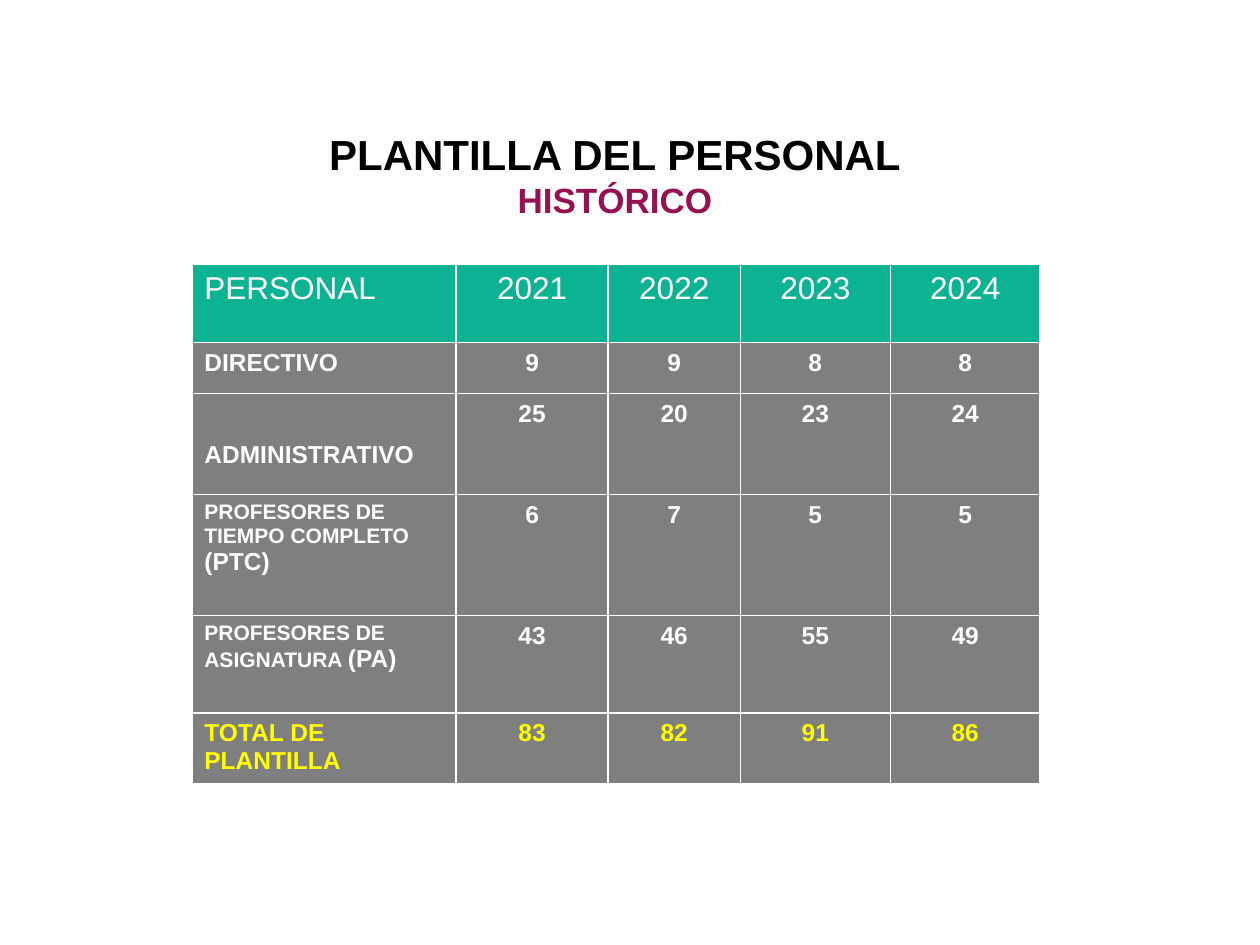
import pptx
import pptx.util
import pptx.dml.color
import pptx.enum.text
import pptx.oxml
import pptx.oxml.ns
from dataclasses import dataclass

Pt = pptx.util.Pt
RGB = pptx.dml.color.RGBColor.from_string
CENTER = pptx.enum.text.PP_ALIGN.CENTER
LEFT = pptx.enum.text.PP_ALIGN.LEFT


@dataclass
class Theme:
    font: str = "Arial"
    black: str = "000000"
    white: str = "FFFFFF"
    plum: str = "961151"
    green: str = "0CB393"
    gray: str = "7F7F7F"
    yellow: str = "FFFF00"
    title: int = 24
    subtitle: int = 20
    header: int = 18
    body: int = 14
    small: int = 12


theme = Theme()


def set_font(font, size, color, bold):
    font.name = theme.font
    font.size = Pt(size)
    font.bold = bold
    font.color.rgb = RGB(color)


def add_borders(cell):
    properties = cell._tc.get_or_add_tcPr()
    for side in ("lnL", "lnR", "lnT", "lnB"):
        properties.append(pptx.oxml.parse_xml(
            f'<a:{side} {pptx.oxml.ns.nsdecls("a")} w="12700"><a:solidFill>'
            f'<a:srgbClr val="{theme.white}"/></a:solidFill></a:{side}>'))


deck = pptx.Presentation()
deck.slide_width = Pt(720)
deck.slide_height = Pt(540)
page = deck.slides.add_slide(deck.slide_layouts[5])

title = page.shapes.title
title.left, title.top, title.width, title.height = Pt(74.2), Pt(69.8), Pt(554.4), Pt(60.5)
frame = title.text_frame
frame.text = "PLANTILLA DEL PERSONAL\nHISTÓRICO"
frame.auto_size = pptx.enum.text.MSO_AUTO_SIZE.NONE
frame.vertical_anchor = pptx.enum.text.MSO_ANCHOR.TOP
title_styles = [(theme.title, theme.black), (theme.subtitle, theme.plum)]
for para, (size, color) in zip(frame.paragraphs, title_styles):
    para.alignment = CENTER
    set_font(para.font, size, color, True)

rows = [
    ("PERSONAL", 2021, 2022, 2023, 2024),
    ("DIRECTIVO", 9, 9, 8, 8),
    ("ADMINISTRATIVO", 25, 20, 23, 24),
    ("PROFESORES DE TIEMPO COMPLETO (PTC)", 6, 7, 5, 5),
    ("PROFESORES DE ASIGNATURA (PA)", 43, 46, 55, 49),
    ("TOTAL DE PLANTILLA", 83, 82, 91, 86),
]
column_widths = [151, 87, 75.5, 85.7, 85.7]
row_heights = [44.6, 29.1, 57.7, 69.2, 55.7, 40.6]
table = page.shapes.add_table(
    len(rows), len(column_widths), Pt(109.6), Pt(151.2),
    Pt(sum(column_widths)), Pt(sum(row_heights))).table
table.horz_banding = False
for column, width in zip(table.columns, column_widths):
    column.width = Pt(width)
for row, height in zip(table.rows, row_heights):
    row.height = Pt(height)

for row_index, values in enumerate(rows):
    is_header = row_index == 0
    is_total = row_index == len(rows) - 1
    for column_index, value in enumerate(values):
        cell = table.cell(row_index, column_index)
        add_borders(cell)
        cell.fill.solid()
        cell.fill.fore_color.rgb = RGB(theme.green if is_header else theme.gray)
        para = cell.text_frame.paragraphs[0]
        para.alignment = CENTER if column_index else LEFT
        if value == "ADMINISTRATIVO":
            para.line_spacing = 2.5
        set_font(para.font, theme.header if is_header else theme.body,
                 theme.yellow if is_total else theme.white, not is_header)
        label, bracket, code = str(value).partition("(")
        span = para.add_run()
        span.text = label
        if bracket:
            span.font.size = Pt(theme.small)
            para.add_run().text = bracket + code

deck.save("out.pptx")
